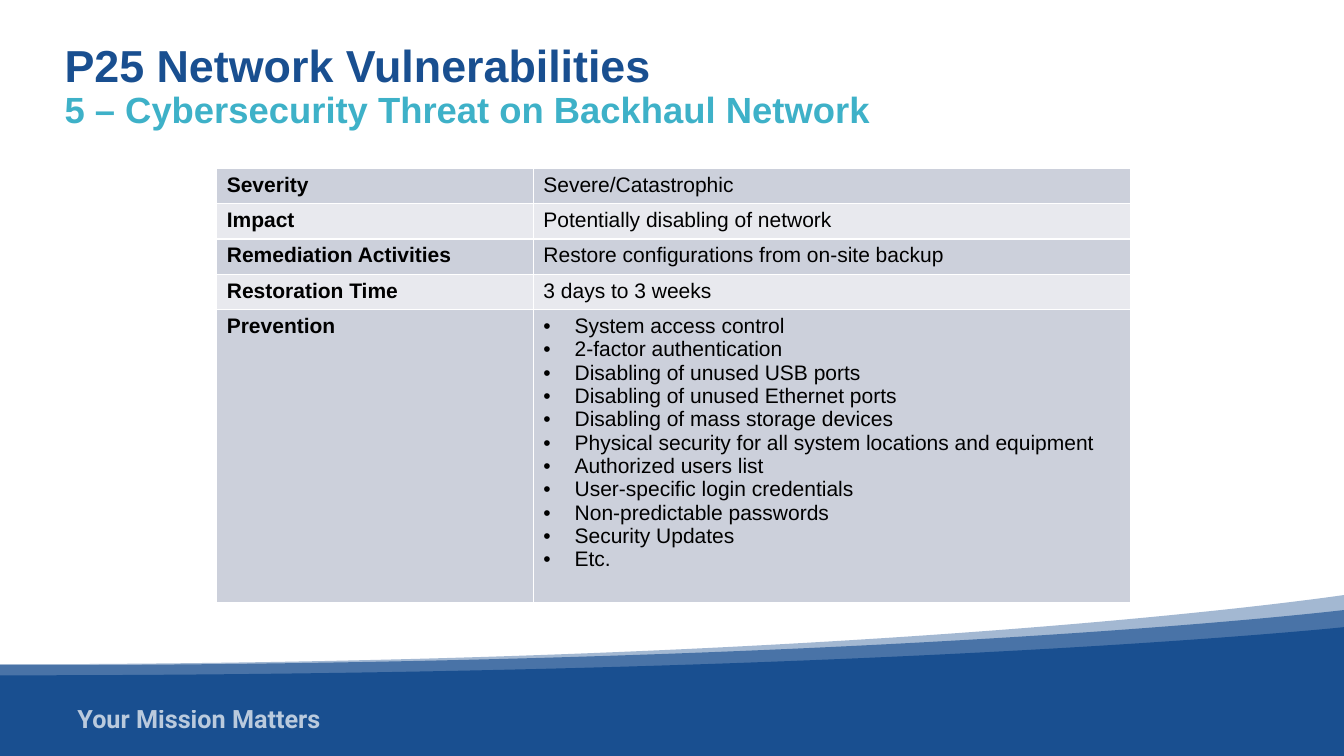
from lxml.etree import SubElement
from pptx import Presentation
from pptx.dml.color import RGBColor
from pptx.enum.text import MSO_ANCHOR, MSO_AUTO_SIZE, PP_ALIGN
from pptx.oxml.ns import qn
from pptx.util import Inches, Pt

NAVY = RGBColor(0x19, 0x4F, 0x90)
TEAL = RGBColor(0x3E, 0xB1, 0xC8)
WHITE = RGBColor(0xFF, 0xFF, 0xFF)
BLACK = RGBColor(0, 0, 0)
BANDS = (RGBColor(0xCC, 0xD0, 0xDB), RGBColor(0xE8, 0xE9, 0xEE))

WIDTH, HEIGHT = 13.33, 7.5
BLEED = 0.02
TITLE_LINES = [
    ("P25 Network Vulnerabilities", 32, NAVY),
    ("5 – Cybersecurity Threat on Backhaul Network", 26, TEAL),
]
SLOGAN = "Your Mission Matters"
FACTS = [
    ("Severity", ["Severe/Catastrophic"]),
    ("Impact", ["Potentially disabling of network"]),
    ("Remediation Activities", ["Restore configurations from on-site backup"]),
    ("Restoration Time", ["3 days to 3 weeks"]),
    ("Prevention", [
        "System access control",
        "2-factor authentication",
        "Disabling of unused USB ports",
        "Disabling of unused Ethernet ports",
        "Disabling of mass storage devices",
        "Physical security for all system locations and equipment",
        "Authorized users list",
        "User-specific login credentials",
        "Non-predictable passwords",
        "Security Updates",
        "Etc.",
    ]),
]
COLUMN_WIDTHS = (3.14, 5.92)
ROW_HEIGHTS = (0.35, 0.35, 0.35, 0.35, 2.91)
WAVES = [(5.9, 6.59, 40), (6.05, 6.6, 65), (6.22, 6.7, 100)]
WAVE_PULL = 8.81


def set_opacity(fill_parent, percent):
    color = next(fill_parent.iter(qn("a:srgbClr")))
    SubElement(color, qn("a:alpha"), val=str(percent * 1000))


def add_run(paragraph, text, size, color, bold, font_name="Arial"):
    run = paragraph.add_run()
    run.text = text
    run.font.name = font_name
    run.font.size = Pt(size)
    run.font.bold = bold
    run.font.color.rgb = color
    return run


def add_wave(slide, right_top, left_top, opacity):
    left, right, bottom = -BLEED, WIDTH + BLEED, HEIGHT + BLEED
    corners = [(left, left_top), (left, bottom), (right, bottom)]
    builder = slide.shapes.build_freeform(Inches(right), Inches(right_top))
    builder.add_line_segments([(Inches(x), Inches(y)) for x, y in corners], close=True)
    wave = builder.convert_to_shape()
    wave.shadow.inherit = False
    wave.fill.solid()
    wave.fill.fore_color.rgb = NAVY
    wave.line.fill.background()

    crest = next(wave._element.iter(qn("a:lnTo")))
    crest.tag = qn("a:cubicBezTo")
    controls = [(right, right_top), (WAVE_PULL, left_top)]
    for index, (x, y) in enumerate(controls):
        point = crest.makeelement(
            qn("a:pt"), x=str(Inches(x) - wave.left), y=str(Inches(y) - wave.top))
        crest.insert(index, point)
    if opacity < 100:
        set_opacity(wave._element.spPr.find(qn("a:solidFill")), opacity)


def add_title(slide):
    title = slide.shapes.title
    title.left, title.top = Inches(0.54), Inches(0.38)
    title.width, title.height = Inches(WIDTH - 0.54), Inches(0.52)
    frame = title.text_frame
    frame.auto_size = MSO_AUTO_SIZE.NONE
    frame.vertical_anchor = MSO_ANCHOR.TOP
    paragraph = frame.paragraphs[0]
    paragraph.alignment = PP_ALIGN.LEFT
    paragraph.line_spacing = 0.9
    paragraph.space_before = Pt(0)
    for index, (text, size, color) in enumerate(TITLE_LINES):
        if index:
            paragraph.add_line_break()
        add_run(paragraph, text, size, color, True)


def add_slogan(slide):
    box = slide.shapes.add_textbox(Inches(0.67), Inches(6.93), Inches(3.89), Inches(0.41))
    box.text_frame.word_wrap = True
    run = add_run(box.text_frame.paragraphs[0], SLOGAN, 18, WHITE, True, "Roboto")
    set_opacity(run.font._rPr, 70)


def fill_cell(cell, lines, bold, band):
    cell.fill.solid()
    cell.fill.fore_color.rgb = band
    frame = cell.text_frame
    for index, line in enumerate(lines):
        paragraph = frame.add_paragraph() if index else frame.paragraphs[0]
        if len(lines) > 1:
            properties = paragraph._p.get_or_add_pPr()
            properties.set("marL", str(Inches(0.31)))
            properties.set("indent", str(-Inches(0.31)))
            SubElement(properties, qn("a:buFont"), typeface="Arial")
            SubElement(properties, qn("a:buChar"), char="•")
        add_run(paragraph, line, 15, BLACK, bold)


def add_facts(slide):
    frame = slide.shapes.add_table(
        len(FACTS), len(COLUMN_WIDTHS), Inches(2.15), Inches(1.67),
        Inches(sum(COLUMN_WIDTHS)), Inches(sum(ROW_HEIGHTS)))
    table = frame.table
    table.first_row = False
    for column, width in zip(table.columns, COLUMN_WIDTHS):
        column.width = Inches(width)
    for index, (label, lines) in enumerate(FACTS):
        table.rows[index].height = Inches(ROW_HEIGHTS[index])
        band = BANDS[index % 2]
        fill_cell(table.cell(index, 0), [label], True, band)
        fill_cell(table.cell(index, 1), lines, False, band)


def main():
    presentation = Presentation()
    presentation.slide_width, presentation.slide_height = Inches(WIDTH), Inches(HEIGHT)
    slide = presentation.slides.add_slide(presentation.slide_layouts[5])
    for wave in WAVES:
        add_wave(slide, *wave)
    add_slogan(slide)
    add_title(slide)
    add_facts(slide)
    presentation.save("out.pptx")


if __name__ == "__main__":
    main()
